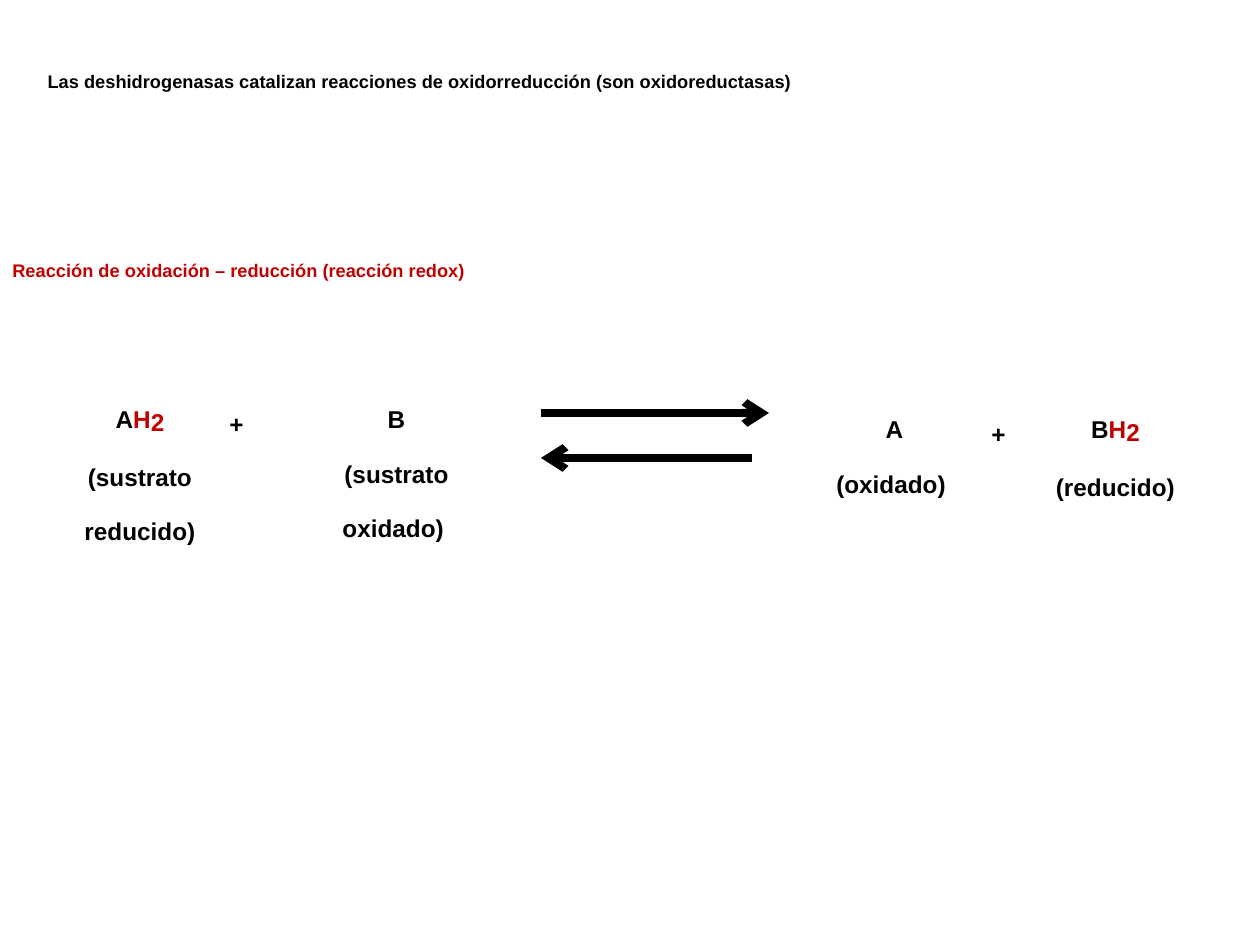
from dataclasses import dataclass

from lxml.etree import SubElement
from pptx import Presentation
from pptx.dml.color import RGBColor
from pptx.enum.shapes import MSO_CONNECTOR as Connector
from pptx.enum.text import MSO_ANCHOR as Anchor, MSO_AUTO_SIZE as AutoSize, PP_ALIGN as Align
from pptx.oxml.ns import qn
from pptx.shapes.autoshape import Shape
from pptx.slide import Slide
from pptx.util import Emu, Inches, Pt

PX_PER_INCH = 126


@dataclass(frozen=True)
class Theme:
    font: str = "Arial"
    ink: RGBColor = RGBColor(0x00, 0x00, 0x00)
    accent: RGBColor = RGBColor(0xC0, 0x00, 0x00)
    heading: Pt = Pt(18)
    formula: Pt = Pt(24)
    arrow: Pt = Pt(4.5)
    lowered: int = -18000
    subscript: int = -25000


THEME = Theme()


@dataclass(frozen=True)
class Span:
    text: str
    color: RGBColor = THEME.ink
    baseline: int = THEME.lowered


@dataclass(frozen=True)
class Label:
    """A text box in px; each line is a tuple of spans."""
    left: int
    top: int
    width: int
    height: int
    lines: tuple[tuple[Span, ...], ...]
    size: Pt = THEME.formula
    align: Align = Align.CENTER


@dataclass(frozen=True)
class Arrow:
    start: int
    end: int
    y: int


PLUS = ((Span("+"),),)
HYDROGEN = (Span("H", THEME.accent), Span("2", THEME.accent, THEME.subscript))

TITLE = Label(35, 45, 1032, 131, ((Span(
    "Las deshidrogenasas catalizan reacciones de oxidorreducción (son oxidoreductasas)"),),),
    THEME.heading, Align.LEFT)

LABELS = (
    Label(0, 234, 1260, 72, ((Span(
        "Reacción de oxidación – reducción (reacción redox)", THEME.accent),),),
        THEME.heading, Align.LEFT),
    Label(-35, 373, 350, 186,
          ((Span("A"), *HYDROGEN), (Span("(sustrato"),), (Span("reducido)"),))),
    Label(217, 378, 77, 72, PLUS, align=Align.LEFT),
    Label(243, 373, 307, 199,
          ((Span("B"),), (Span("(sustrato"),), (Span("oxidado) "),))),
    Label(730, 383, 329, 129, ((Span("A"),), (Span("(oxidado) "),))),
    Label(979, 388, 72, 72, PLUS, align=Align.LEFT),
    Label(971, 383, 289, 129, ((Span("B"), *HYDROGEN), (Span("(reducido)"),))),
)

ARROWS = (Arrow(541, 769, 413), Arrow(752, 541, 458))


def px(length: int) -> Emu:
    return Emu(round(length * Inches(1) / PX_PER_INCH))


def fill_box(box: Shape, label: Label) -> None:
    """Place a box or placeholder and write its formatted lines."""
    box.left, box.top = px(label.left), px(label.top)
    box.width, box.height = px(label.width), px(label.height)
    frame = box.text_frame
    frame.word_wrap = True
    frame.auto_size = AutoSize.NONE
    frame.vertical_anchor = Anchor.TOP
    for index, line in enumerate(label.lines):
        para = frame.add_paragraph() if index else frame.paragraphs[0]
        para.alignment = label.align
        for span in line:
            run = para.add_run()
            run.text = span.text
            run.font.name = THEME.font
            run.font.size = label.size
            run.font.bold = True
            run.font.color.rgb = span.color
            run._r.get_or_add_rPr().set("baseline", str(span.baseline))


def draw_arrow(page: Slide, arrow: Arrow) -> None:
    connector = page.shapes.add_connector(
        Connector.STRAIGHT, px(arrow.start), px(arrow.y), px(arrow.end), px(arrow.y))
    connector.line.color.rgb = THEME.ink
    connector.line.width = THEME.arrow
    SubElement(connector.line._get_or_add_ln(), qn("a:tailEnd"), type="arrow")
    SubElement(connector._element.spPr, qn("a:effectLst"))


def main() -> None:
    deck = Presentation()
    deck.slide_width, deck.slide_height = Inches(10), Inches(7.5)
    page = deck.slides.add_slide(deck.slide_layouts.get_by_name("Title Only"))
    fill_box(page.shapes.title, TITLE)
    for label in LABELS:
        fill_box(page.shapes.add_textbox(0, 0, 0, 0), label)
    for arrow in ARROWS:
        draw_arrow(page, arrow)
    deck.save("out.pptx")


if __name__ == "__main__":
    main()
